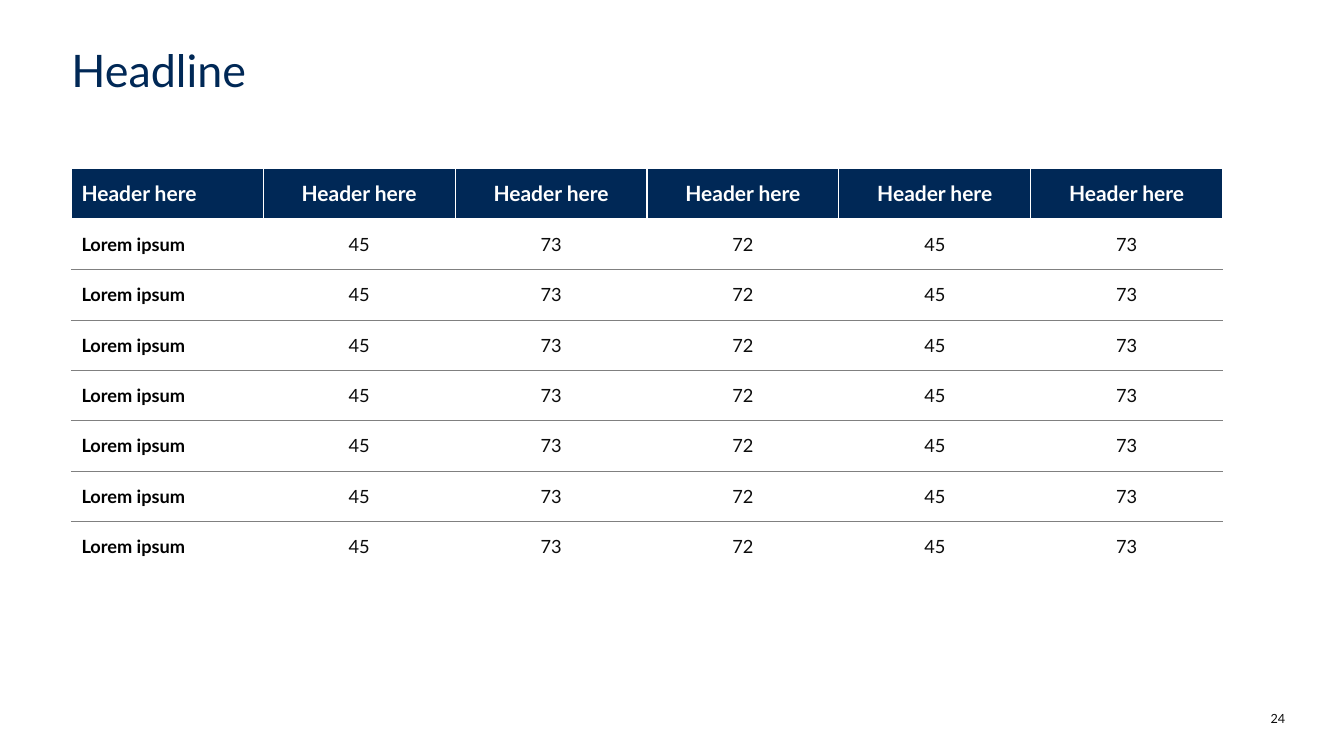
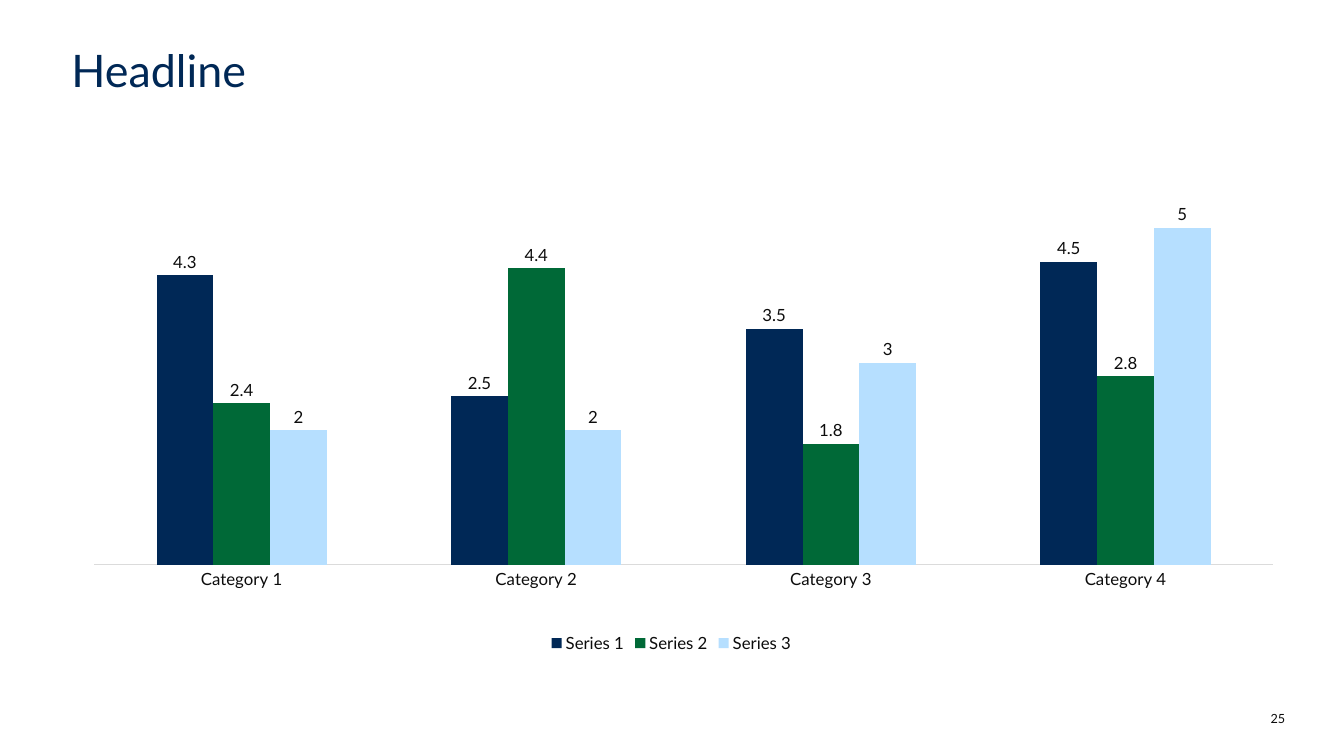
import pptx
import pptx.chart.data
import pptx.dml.color
import pptx.enum.chart
import pptx.enum.text
import pptx.oxml
import pptx.oxml.ns
import pptx.util

Cm = pptx.util.Cm
Pt = pptx.util.Pt
Align = pptx.enum.text.PP_ALIGN
Anchor = pptx.enum.text.MSO_ANCHOR
Fit = pptx.enum.text.MSO_AUTO_SIZE
Kind = pptx.enum.chart


class Deck:
    hues = {
        "navy": "002856",
        "green": "006937",
        "sky": "B6DFFF",
        "ink": "0C0C0C",
        "black": "000000",
        "white": "FFFFFF",
        "rule": "808080",
        "axis": "DBDBDB",
    }
    face = "Lato"
    left = Cm(1.8)

    def __init__(self):
        self.show = pptx.Presentation()
        self.show.slide_width = Cm(33.87)
        self.show.slide_height = Cm(19.05)
        self.slide = None

    def color(self, name):
        return pptx.dml.color.RGBColor.from_string(self.hues[name])

    def style(self, font, size, hue="ink", bold=False):
        font.name = self.face
        font.size = Pt(size)
        font.bold = bold
        font.color.rgb = self.color(hue)

    def text(self, para, words, size, hue="ink", bold=False, align=Align.LEFT):
        para.alignment = align
        run = para.add_run()
        run.text = words
        self.style(run.font, size, hue, bold)

    def pad(self, frame, anchor):
        frame.margin_left = frame.margin_right = 0
        frame.margin_top = frame.margin_bottom = 0
        frame.word_wrap = True
        frame.vertical_anchor = anchor

    def start(self, title, number):
        self.slide = self.show.slides.add_slide(self.show.slide_layouts[5])
        head = self.slide.shapes.title
        head.left, head.top = self.left, Cm(1.22)
        head.width, head.height = Cm(30.94), Cm(1.22)
        frame = head.text_frame
        self.pad(frame, Anchor.TOP)
        frame.auto_size = Fit.SHAPE_TO_FIT_TEXT
        para = frame.paragraphs[0]
        para.line_spacing = 0.9
        self.text(para, title, 32, "navy")
        box = self.slide.shapes.add_textbox(Cm(31.55), Cm(17.8), Cm(0.84), Cm(0.5))
        self.pad(box.text_frame, Anchor.BOTTOM)
        self.text(box.text_frame.paragraphs[0], str(number), 9, align=Align.RIGHT)

    def border(self, cell, sides, hue, width):
        props = cell._tc.get_or_add_tcPr()
        space = pptx.oxml.ns.nsdecls("a")
        for side in sides:
            props.append(pptx.oxml.parse_xml(
                f'<a:ln{side} {space} w="{Pt(width)}"><a:solidFill>'
                f'<a:srgbClr val="{self.hues[hue]}"/></a:solidFill></a:ln{side}>'))

    def table(self, rows, top, width, height):
        deep, wide = len(rows), len(rows[0])
        frame = self.slide.shapes.add_table(
            deep, wide, self.left, top, width, height * deep)
        grid = frame.table
        grid.horz_banding = False
        for col in grid.columns:
            col.width = width // wide
        for y, row in enumerate(rows):
            grid.rows[y].height = height
            for x, words in enumerate(row):
                cell = grid.cell(y, x)
                cell.vertical_anchor = Anchor.MIDDLE
                align = Align.CENTER if x else Align.LEFT
                para = cell.text_frame.paragraphs[0]
                if y == 0:
                    self.border(cell, "LRT", "white", 1)
                    cell.fill.solid()
                    cell.fill.fore_color.rgb = self.color("navy")
                    self.text(para, words, 15, "white", True, align)
                    continue
                if y > 1:
                    self.border(cell, "T", "rule", 0.5)
                if y < deep - 1:
                    self.border(cell, "B", "rule", 0.5)
                cell.fill.background()
                if x:
                    cell.margin_left = cell.margin_right = 0
                    cell.margin_top = cell.margin_bottom = 0
                self.text(para, words, 13, "ink" if x else "black", not x, align)

    def chart(self, cats, series, place):
        data = pptx.chart.data.CategoryChartData()
        data.categories = cats
        for name, hue, vals in series:
            data.add_series(name, vals)
        chart = self.slide.shapes.add_chart(
            Kind.XL_CHART_TYPE.COLUMN_CLUSTERED, *place, data).chart
        self.style(chart.font, 12)
        chart.has_title = False
        chart.has_legend = True
        chart.legend.position = Kind.XL_LEGEND_POSITION.BOTTOM
        chart.legend.include_in_layout = False
        self.style(chart.legend.font, 12)

        base = chart.category_axis
        base.major_tick_mark = Kind.XL_TICK_MARK.NONE
        base.format.line.color.rgb = self.color("axis")
        base.format.line.width = Pt(0.75)
        self.style(base.tick_labels.font, 12)
        scale = chart.value_axis
        scale.minimum_scale, scale.maximum_scale = 0, 6
        scale.has_major_gridlines = False
        scale.visible = False

        plot = chart.plots[0]
        plot.vary_by_categories = False
        plot.gap_width = 219
        plot.overlap = 0
        plot.has_data_labels = True
        tags = plot.data_labels
        tags.show_value = True
        tags.position = Kind.XL_LABEL_POSITION.OUTSIDE_END
        self.style(tags.font, 12)
        for bars, (name, hue, vals) in zip(plot.series, series):
            bars.format.fill.solid()
            bars.format.fill.fore_color.rgb = self.color(hue)
        self.layout(chart, x=0.03, y=0.03, w=0.96, h=0.79)

    def layout(self, chart, **parts):
        area = chart._chartSpace.chart.plotArea
        for old in area.findall(pptx.oxml.ns.qn("c:layout")):
            area.remove(old)
        modes = '<c:xMode val="edge"/><c:yMode val="edge"/>'
        sizes = "".join(f'<c:{key} val="{val}"/>' for key, val in parts.items())
        area.insert(0, pptx.oxml.parse_xml(
            f'<c:layout {pptx.oxml.ns.nsdecls("c")}><c:manualLayout>'
            f'<c:layoutTarget val="inner"/>{modes}{sizes}'
            f'</c:manualLayout></c:layout>'))


def main():
    deck = Deck()
    deck.start("Headline", 24)
    rows = [["Header here"] * 6]
    rows += [["Lorem ipsum", "45", "73", "72", "45", "73"]] * 7
    deck.table(rows, Cm(4.25), Cm(29.01), Cm(1.27))

    deck.start("Headline", 25)
    deck.chart(
        [f"Category {n}" for n in range(1, 5)],
        [
            ("Series 1", "navy", (4.3, 2.5, 3.5, 4.5)),
            ("Series 2", "green", (2.4, 4.4, 1.8, 2.8)),
            ("Series 3", "sky", (2, 2, 3, 5)),
        ],
        (Cm(1.45), Cm(3.66), Cm(30.94), Cm(12.9)),
    )
    deck.show.save("out.pptx")


if __name__ == "__main__":
    main()
